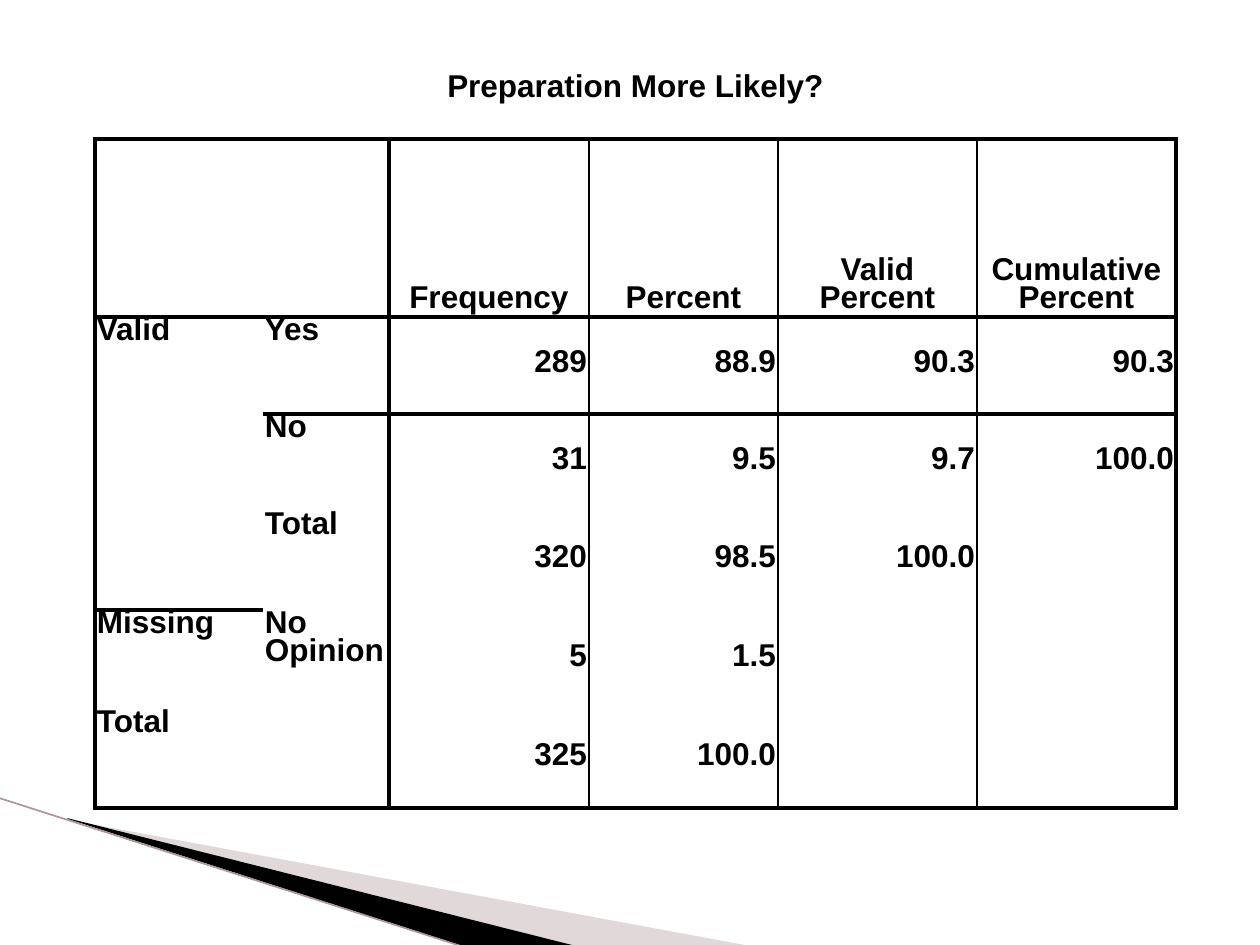
from dataclasses import dataclass

from lxml.etree import SubElement
from pptx import Presentation
from pptx.dml.color import RGBColor as RGB
from pptx.enum.shapes import MSO_CONNECTOR as Connector
from pptx.enum.text import MSO_ANCHOR as Anchor, PP_ALIGN as Align
from pptx.oxml.ns import qn
from pptx.util import Emu, Pt

SCALE = 914400 / 126  # EMU in one px


@dataclass(frozen=True)
class Theme:
    ink: RGB = RGB(0x00, 0x00, 0x00)
    paper: RGB = RGB(0xFF, 0xFF, 0xFF)
    sweep: RGB = RGB(0xB4, 0xA0, 0xA1)
    edge: RGB = RGB(0xAC, 0x96, 0x97)
    font: str = "Arial"
    size: int = 18
    leading: int = 16
    thick: float = 2.25
    thin: float = 1


theme = Theme()


def px(count):
    return Emu(round(count * SCALE))


def write(cell, text, align=Align.LEFT, anchor=Anchor.TOP):
    cell.margin_left = cell.margin_right = cell.margin_top = cell.margin_bottom = px(2)
    cell.vertical_anchor = anchor
    para = cell.text_frame.paragraphs[0]
    para.alignment = align
    para.line_spacing = Pt(theme.leading)
    span = para.add_run()
    span.text = text
    span.font.name = theme.font
    span.font.size = Pt(theme.size)
    span.font.bold = True
    span.font.color.rgb = theme.ink


deck = Presentation()
deck.slide_width, deck.slide_height = px(1260), px(945)
page = deck.slides.add_slide(deck.slide_layouts[6])

# Decorative sweep in the lower left corner
sweeps = [
    ([(69, 820), (750, 946), (575, 946), (69, 819)], theme.sweep, 40),
    ([(67, 818), (576, 946), (469, 948), (68, 819)], theme.ink, 100),
]
for points, color, opacity in sweeps:
    builder = page.shapes.build_freeform(*points[0], scale=SCALE)
    builder.add_line_segments(points[1:], close=True)
    wedge = builder.convert_to_shape()
    wedge.shadow.inherit = False
    wedge.fill.solid()
    wedge.fill.fore_color.rgb = color
    wedge.line.fill.background()
    if opacity < 100:
        tint = wedge._element.spPr.find(f"{qn('a:solidFill')}/{qn('a:srgbClr')}")
        SubElement(tint, qn("a:alpha"), val=str(opacity * 1000))

edge = page.shapes.add_connector(Connector.STRAIGHT, px(-1), px(798), px(467), px(948))
edge.line.color.rgb = theme.edge
edge.line.width = Pt(0.95)
SubElement(edge._element.spPr, qn("a:effectLst"))

# Frequency table
column_widths = [168, 126, 200, 189, 199, 199]
row_heights = [97, 178, 97, 97, 99, 99, 99]
title = "Preparation More Likely?"
headings = ["Frequency", "Percent", "Valid Percent", "Cumulative Percent"]
answers = [
    ("Valid", "Yes", "289", "88.9", "90.3", "90.3"),
    ("", "No", "31", "9.5", "9.7", "100.0"),
    ("", "Total", "320", "98.5", "100.0", ""),
    ("Missing", "No Opinion", "5", "1.5", "", ""),
    ("Total", "", "325", "100.0", "", ""),
]
row_count, column_count = len(row_heights), len(column_widths)
last_row, last_column = row_count - 1, column_count - 1

frame = page.shapes.add_table(row_count, column_count, px(95), px(42),
                              px(sum(column_widths)), px(sum(row_heights)))
table = frame.table
table.first_row = table.horz_banding = False
style = table._tbl.tblPr.find(qn("a:tableStyleId"))
style.text = "{2D5ABB26-0587-4C30-8999-92F81FD0307C}"  # no style, no grid
for column, width in zip(table.columns, column_widths):
    column.width = px(width)
for row, height in zip(table.rows, row_heights):
    row.height = px(height)

table.cell(0, 0).merge(table.cell(0, last_column))
table.cell(2, 0).merge(table.cell(4, 0))
table.cell(last_row, 0).merge(table.cell(last_row, 1))

write(table.cell(0, 0), title, align=Align.CENTER, anchor=Anchor.MIDDLE)
for c, heading in enumerate(headings, start=2):
    write(table.cell(1, c), heading, align=Align.CENTER, anchor=Anchor.BOTTOM)
for r, answer in enumerate(answers, start=2):
    for c, text in enumerate(answer):
        if text and c < 2:
            write(table.cell(r, c), text)
        elif text:
            write(table.cell(r, c), text, align=Align.RIGHT, anchor=Anchor.MIDDLE)

# Rules: heavy around the body, the header and the labels, fine between figures
upright = {0: theme.thick, 2: theme.thick, 3: theme.thin, 4: theme.thin,
           5: theme.thin, 6: theme.thick}
level = {1: theme.thick, 2: theme.thick, row_count: theme.thick}
for r in range(row_count):
    for c in range(column_count):
        cell = table.cell(r, c)
        borders = {
            "a:lnL": upright.get(c) if r else None,
            "a:lnR": upright.get(c + 1) if r else None,
            "a:lnT": level.get(r),
            "a:lnB": level.get(r + 1),
        }
        properties = cell._tc.get_or_add_tcPr()
        for tag, weight in borders.items():
            if weight:
                rule = SubElement(properties, qn(tag), w=str(Pt(weight)))
                paint = SubElement(rule, qn("a:solidFill"))
                SubElement(paint, qn("a:srgbClr"), val=str(theme.ink))
        cell.fill.solid()
        cell.fill.fore_color.rgb = theme.paper

deck.save("out.pptx")
